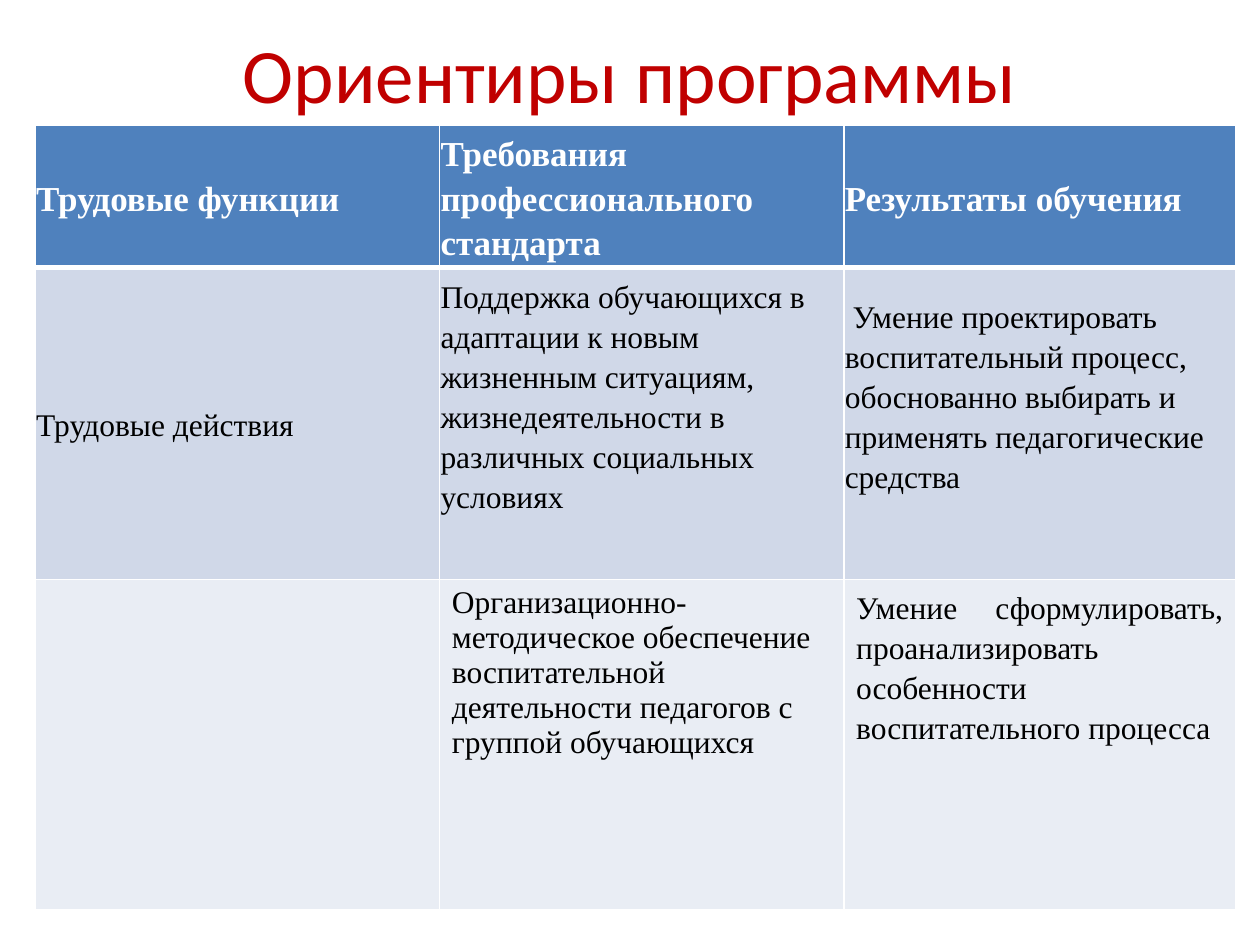
from dataclasses import dataclass

from lxml import etree
from pptx import Presentation
from pptx import util as u
from pptx.dml.color import RGBColor
from pptx.enum import text
from pptx.oxml.ns import qn


@dataclass(frozen=True)
class Theme:
    title_font: str = "Calibri"
    body_font: str = "Times New Roman"
    title_size: int = 44
    header_size: int = 20
    body_size: int = 18
    title: str = "C00000"
    header_fill: str = "4F81BD"
    odd_fill: str = "D0D8E8"
    even_fill: str = "E9EDF4"
    light: str = "FFFFFF"
    dark: str = "000000"


@dataclass(frozen=True)
class CellStyle:
    """Paragraph and margin settings; margins are left/right, top, bottom in cm."""
    margins: tuple[float, float, float] = (0.02, 0.02, 0.02)
    anchor: text.MSO_ANCHOR = text.MSO_ANCHOR.MIDDLE
    align: text.PP_ALIGN = text.PP_ALIGN.LEFT
    line_spacing: float = 1.15
    space_after: int = 10


@dataclass(frozen=True)
class Row:
    height: float
    fill: str
    cells: tuple[tuple[str, CellStyle], ...]
    header: bool = False


THEME = Theme()
COLUMN_WIDTHS = (8.15, 8.15, 7.9)
TIGHT = CellStyle()
RAISED = CellStyle(margins=(0.02, 0.02, 1.15))
TOP = CellStyle((0.25, 0.13, 0.13), text.MSO_ANCHOR.TOP, line_spacing=1.0, space_after=0)
TOP_JUSTIFIED = CellStyle((0.25, 0.13, 0.13), text.MSO_ANCHOR.TOP, text.PP_ALIGN.JUSTIFY)

ROWS = (
    Row(2.86, THEME.header_fill, (
        ("Трудовые функции", TIGHT),
        ("Требования профессионального стандарта", TIGHT),
        ("Результаты обучения", TIGHT),
    ), header=True),
    Row(6.29, THEME.odd_fill, (
        ("Трудовые действия", TIGHT),
        ("Поддержка обучающихся в адаптации к новым жизненным ситуациям, "
         "жизнедеятельности в различных социальных условиях", RAISED),
        (" Умение проектировать воспитательный процесс, обоснованно выбирать "
         "и применять педагогические средства", RAISED),
    )),
    Row(6.65, THEME.even_fill, (
        ("", TOP),
        ("Организационно-методическое обеспечение воспитательной "
         "деятельности педагогов с группой обучающихся", TOP),
        ("Умение сформулировать, проанализировать особенности "
         "воспитательного процесса", TOP_JUSTIFIED),
    )),
)


def format_font(font, name: str, size: int, color: str, bold: bool = False) -> None:
    font.name, font.size, font.bold = name, u.Pt(size), bold
    font.color.rgb = RGBColor.from_string(color)


def set_borders(cell, bottom_width: int, top_width: int) -> None:
    """Draw white borders; line elements must precede the cell fill."""
    properties = cell._tc.get_or_add_tcPr()
    widths = {"lnL": 1, "lnR": 1, "lnT": top_width, "lnB": bottom_width}
    for position, (side, width) in enumerate(widths.items()):
        line = etree.Element(qn(f"a:{side}"), w=str(u.Pt(width)))
        fill = etree.SubElement(line, qn("a:solidFill"))
        etree.SubElement(fill, qn("a:srgbClr"), val=THEME.light)
        properties.insert(position, line)


def fill_cell(cell, content: str, style: CellStyle, row: Row) -> None:
    side, top, bottom = style.margins
    cell.margin_left = cell.margin_right = u.Cm(side)
    cell.margin_top, cell.margin_bottom = u.Cm(top), u.Cm(bottom)
    cell.vertical_anchor = style.anchor
    cell.fill.solid()
    cell.fill.fore_color.rgb = RGBColor.from_string(row.fill)
    if not content:
        return
    cell.text_frame.text = content
    paragraph = cell.text_frame.paragraphs[0]
    paragraph.alignment = style.align
    paragraph.line_spacing = style.line_spacing
    paragraph.space_after = u.Pt(style.space_after)
    size = THEME.header_size if row.header else THEME.body_size
    color = THEME.light if row.header else THEME.dark
    format_font(paragraph.runs[0].font, THEME.body_font, size, color, row.header)


def add_title(slide, content: str) -> None:
    title = slide.shapes.title
    title.left, title.top = u.Cm(1.27), u.Cm(0)
    title.width, title.height = u.Cm(22.86), u.Cm(2.92)
    title.text_frame.text = content
    title.text_frame.vertical_anchor = text.MSO_ANCHOR.MIDDLE
    paragraph = title.text_frame.paragraphs[0]
    paragraph.alignment = text.PP_ALIGN.CENTER
    format_font(paragraph.runs[0].font, THEME.title_font, THEME.title_size, THEME.title)


def add_program_table(slide, rows: tuple[Row, ...]) -> None:
    table = slide.shapes.add_table(
        len(rows), len(COLUMN_WIDTHS), u.Cm(0.71), u.Cm(2.53),
        u.Cm(sum(COLUMN_WIDTHS)), u.Cm(sum(row.height for row in rows))).table
    for column, width in zip(table.columns, COLUMN_WIDTHS):
        column.width = u.Cm(width)
    for index, row in enumerate(rows):
        table.rows[index].height = u.Cm(row.height)
        above_is_header = index > 0 and rows[index - 1].header
        for column, (content, style) in enumerate(row.cells):
            cell = table.cell(index, column)
            fill_cell(cell, content, style, row)
            set_borders(cell, 3 if row.header else 1, 3 if above_is_header else 1)


def main() -> None:
    presentation = Presentation()
    presentation.slide_width, presentation.slide_height = u.Cm(25.4), u.Cm(19.05)
    # Title-only layout
    slide = presentation.slides.add_slide(presentation.slide_layouts[5])
    # Heading and table of program requirements
    add_title(slide, "Ориентиры программы")
    add_program_table(slide, ROWS)
    presentation.save("out.pptx")


if __name__ == "__main__":
    main()
